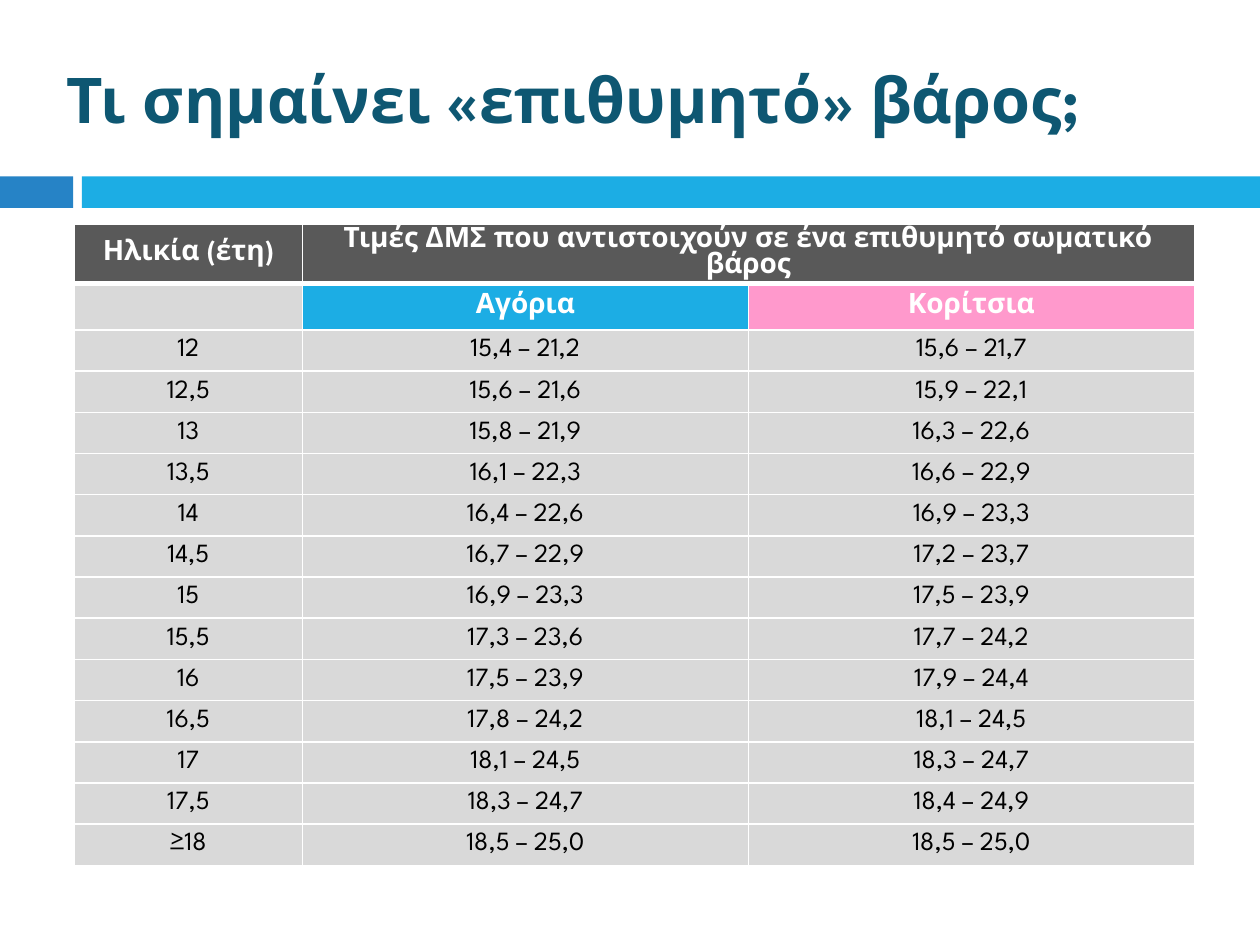
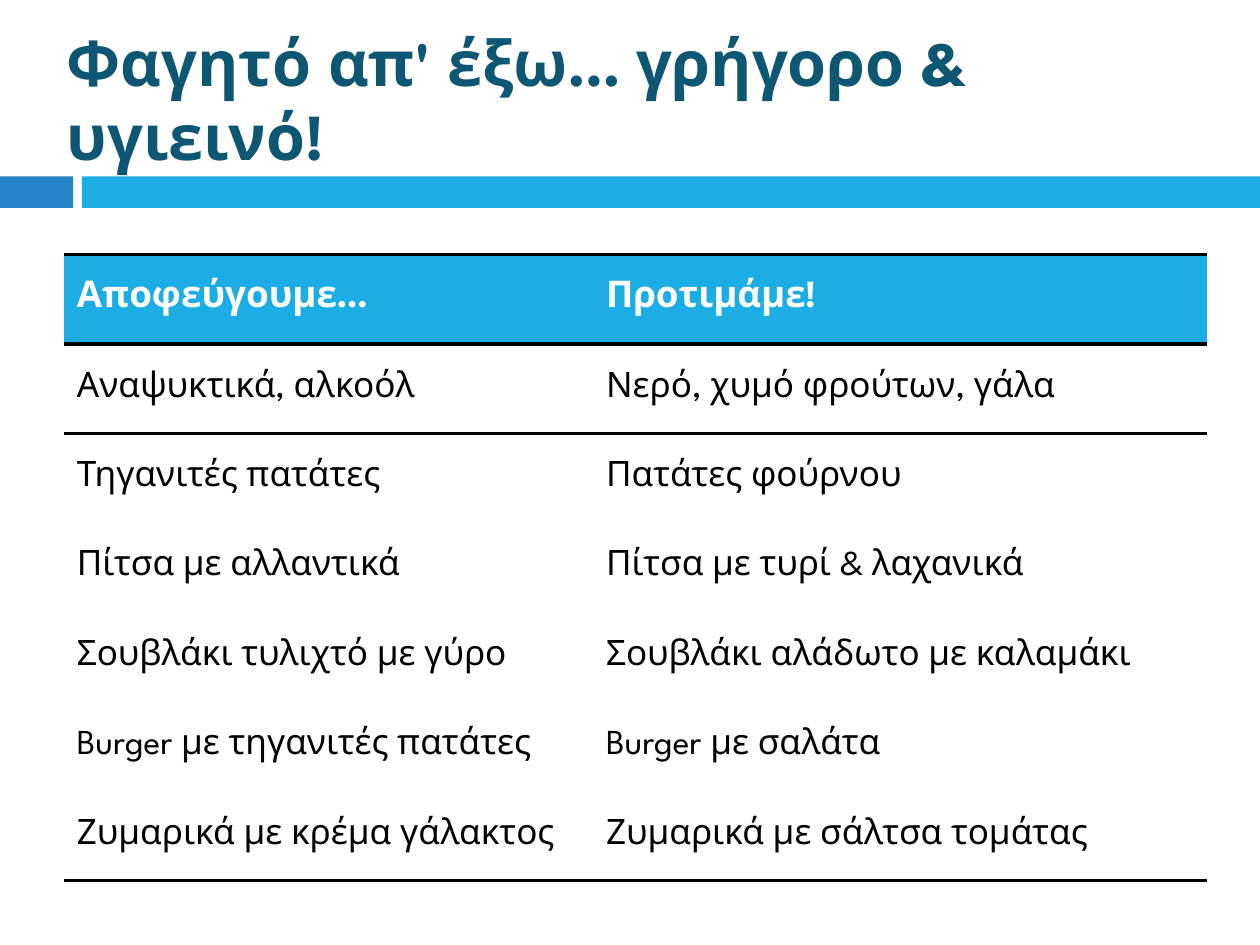
from lxml.etree import SubElement
from pptx import Presentation
from pptx.dml.color import RGBColor
from pptx.enum.shapes import MSO_SHAPE as Shape
from pptx.enum.text import MSO_ANCHOR as Anchor, PP_ALIGN as Align
from pptx.oxml.ns import qn
from pptx.util import Inches, Pt

FONT = "League Spartan"
COLOURS = {
    "title": "0E5772",
    "sky": "1CADE4",
    "blue": "2683C6",
    "pink": "FF99CC",
    "header": "595959",
    "grey": "D9D9D9",
    "white": "FFFFFF",
    "black": "000000",
}


def style_text(para, size, colour, bold):
    for span in para.runs:
        span.font.name = FONT
        span.font.size = Pt(size)
        span.font.bold = bold
        span.font.color.rgb = RGBColor.from_string(COLOURS[colour])


def style_cell(cell, fill, borders):
    props = cell._tc.get_or_add_tcPr()
    for side in "LRTB":
        width, colour = borders.get(side, (0, None))
        line = SubElement(props, qn(f"a:ln{side}"), w=str(Pt(width)))
        if colour:
            paint = SubElement(line, qn("a:solidFill"))
            SubElement(paint, qn("a:srgbClr"), val=COLOURS[colour])
        else:
            SubElement(line, qn("a:noFill"))
    if fill:
        cell.fill.solid()
        cell.fill.fore_color.rgb = RGBColor.from_string(COLOURS[fill])
    else:
        cell.fill.background()
    cell.vertical_anchor = Anchor.MIDDLE


deck = Presentation()
deck.slide_width, deck.slide_height = Inches(10), Inches(7.5)
title_only = deck.slide_layouts[5]

titles = [
    ("Τι σημαίνει «επιθυμητό» βάρος;", 9.15),
    ("Φαγητό απ' έξω… γρήγορο & υγιεινό!", 9.21),
]
pages = []
for text, width in titles:
    page = deck.slides.add_slide(title_only)
    title = page.shapes.title
    title.left, title.top = Inches(0.43), Inches(0.25)
    title.width, title.height = Inches(width), Inches(1.08)
    title.text_frame.text = text
    title.text_frame.vertical_anchor = Anchor.MIDDLE
    para = title.text_frame.paragraphs[0]
    para.alignment = Align.LEFT
    para.line_spacing = Pt(42)
    style_text(para, 36, "title", True)
    pages.append(page)
bmi_page, food_page = pages

for left, width, colour in [(0, 0.58, "blue"), (0.65, 9.35, "sky")]:
    band = bmi_page.shapes.add_shape(
        Shape.RECTANGLE, Inches(left), Inches(1.4), Inches(width), Inches(0.25)
    )
    band.shadow.inherit = False
    band.fill.solid()
    band.fill.fore_color.rgb = RGBColor.from_string(COLOURS[colour])
    band.line.fill.background()
    deck.slide_master.shapes._spTree.insert(2, band._element)

bmi_rows = [
    ("Ηλικία (έτη)", "Τιμές ΔΜΣ που αντιστοιχούν σε ένα επιθυμητό σωματικό βάρος", ""),
    ("", "Αγόρια", "Κορίτσια"),
    ("12", "15,4 – 21,2", "15,6 – 21,7"),
    ("12,5", "15,6 – 21,6", "15,9 – 22,1"),
    ("13", "15,8 – 21,9", "16,3 – 22,6"),
    ("13,5", "16,1 – 22,3", "16,6 – 22,9"),
    ("14", "16,4 – 22,6", "16,9 – 23,3"),
    ("14,5", "16,7 – 22,9", "17,2 – 23,7"),
    ("15", "16,9 – 23,3", "17,5 – 23,9"),
    ("15,5", "17,3 – 23,6", "17,7 – 24,2"),
    ("16", "17,5 – 23,9", "17,9 – 24,4"),
    ("16,5", "17,8 – 24,2", "18,1 – 24,5"),
    ("17", "18,1 – 24,5", "18,3 – 24,7"),
    ("17,5", "18,3 – 24,7", "18,4 – 24,9"),
    ("≥18", "18,5 – 25,0", "18,5 – 25,0"),
]
bmi_fills = {0: ["header"] * 3, 1: ["grey", "sky", "pink"]}
bmi_table = bmi_page.shapes.add_table(
    len(bmi_rows), 3, Inches(0.59), Inches(1.78), Inches(8.89), Inches(5.09)
).table
for column, width in zip(bmi_table.columns, [1.81, 3.54, 3.54]):
    column.width = Inches(width)
for row, values in enumerate(bmi_rows):
    bmi_table.rows[row].height = Inches({0: 0.47, 1: 0.37}.get(row, 4.25 / 13))
    for col, value in enumerate(values):
        cell = bmi_table.cell(row, col)
        borders = {side: (1, "white") for side in "LRTB"}
        if row == 0:
            borders["B"] = (3, "white")
        elif row == 1:
            borders["T"] = (3, "white")
        style_cell(cell, bmi_fills.get(row, ["grey"] * 3)[col], borders)
        inset = Inches(0.05 if col == 0 and row != 1 else 0)
        cell.margin_left = cell.margin_right = inset
        cell.margin_top = cell.margin_bottom = inset
        cell.text_frame.text = value
        para = cell.text_frame.paragraphs[0]
        para.alignment = Align.CENTER
        if row < 2:
            style_text(para, 16, "white", True)
        else:
            style_text(para, 15, "black", False)
bmi_table.cell(0, 1).merge(bmi_table.cell(0, 2))

food_rows = [
    ("Αποφεύγουμε…", "Προτιμάμε!"),
    ("Αναψυκτικά, αλκοόλ", "Νερό, χυμό φρούτων, γάλα"),
    ("Τηγανιτές πατάτες", "Πατάτες φούρνου"),
    ("Πίτσα με αλλαντικά", "Πίτσα με τυρί & λαχανικά"),
    ("Σουβλάκι τυλιχτό με γύρο", "Σουβλάκι αλάδωτο με καλαμάκι"),
    ("Burger με τηγανιτές πατάτες", "Burger με σαλάτα"),
    ("Ζυμαρικά με κρέμα γάλακτος", "Ζυμαρικά με σάλτσα τομάτας"),
]
food_table = food_page.shapes.add_table(
    len(food_rows), 2, Inches(0.51), Inches(2.02), Inches(9.07), Inches(4.97)
).table
for column, width in zip(food_table.columns, [4.2, 4.87]):
    column.width = Inches(width)
rule = (2.25, "black")
ruled_edges = {0, 1, 2, len(food_rows)}
for row, values in enumerate(food_rows):
    food_table.rows[row].height = Inches(0.71)
    for col, value in enumerate(values):
        cell = food_table.cell(row, col)
        edges = {"T": row, "B": row + 1}
        borders = {side: rule for side, edge in edges.items() if edge in ruled_edges}
        style_cell(cell, "sky" if row == 0 else None, borders)
        cell.text_frame.text = value
        para = cell.text_frame.paragraphs[0]
        if row == 0:
            style_text(para, 21, "white", True)
        else:
            style_text(para, 20, "black", False)

deck.save("out.pptx")
